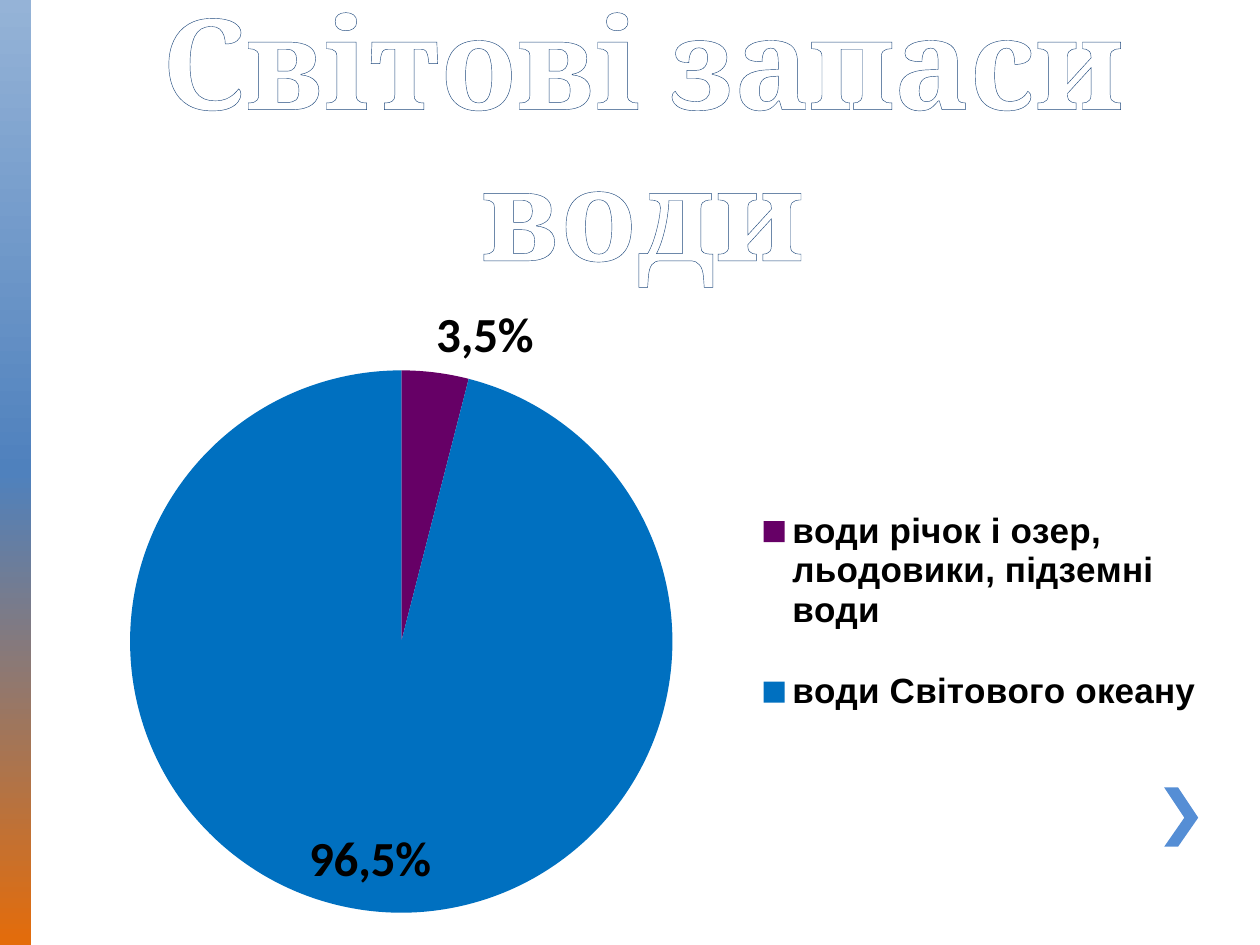
from copy import deepcopy

from lxml import etree
from pptx import Presentation
from pptx.chart.data import CategoryChartData
from pptx.dml.color import RGBColor
from pptx.enum.chart import XL_CHART_TYPE, XL_LABEL_POSITION, XL_LEGEND_POSITION
from pptx.enum.shapes import MSO_SHAPE
from pptx.enum.text import MSO_ANCHOR, MSO_AUTO_SIZE, PP_ALIGN
from pptx.oxml import parse_xml
from pptx.oxml.ns import nsdecls, qn
from pptx.util import Inches, Pt

PIE = XL_CHART_TYPE.PIE
LEGEND_RIGHT = XL_LEGEND_POSITION.RIGHT
OUTSIDE_END = XL_LABEL_POSITION.OUTSIDE_END
INSIDE_END = XL_LABEL_POSITION.INSIDE_END
RECTANGLE = MSO_SHAPE.RECTANGLE
MIDDLE = MSO_ANCHOR.MIDDLE
NO_AUTOFIT = MSO_AUTO_SIZE.NONE
CENTER = PP_ALIGN.CENTER

BAR_STOPS = [(0, "95B3D7"), (0.5, "4F81BD"), (1, "E46C0A")]
ARROW_POINTS = [(9.35, 6.25), (9.24, 6.25), (9.4, 6.49), (9.24, 6.72), (9.35, 6.72), (9.51, 6.49)]
WATER_SHARES = [
    ("води річок і озер, льодовики, підземні води", 4, "3,5%", "660066", OUTSIDE_END),
    ("води Світового океану", 96, "96,5%", "0070C0", INSIDE_END),
]
OCEAN_LABEL_SHIFT = {"x": -0.05, "y": -0.02}
PLOT_FRAME = {"layoutTarget": "inner", "xMode": "edge", "yMode": "edge",
              "x": 0.08, "y": 0.16, "w": 0.46, "h": 0.82}
LEGEND_FRAME = {"xMode": "edge", "yMode": "edge", "x": 0.61, "y": 0.31, "w": 0.38, "h": 0.43}
TITLE_FONT = {"name": "Cambria", "size": Pt(72), "bold": True}
CHART_FONT = {"name": "Calibri", "size": Pt(18)}
LABEL_FONT = {"name": "Calibri", "size": Pt(28), "bold": True}
LEGEND_FONT = {"name": "Arial", "size": Pt(20), "bold": True}


def color(value):
    """Return the colour for a hex string."""
    return RGBColor.from_string(value)


def set_values(target, values):
    """Set every attribute in a dict on the target."""
    for name, value in values.items():
        setattr(target, name, value)


def format_font(font, values, hex_color="000000"):
    """Apply font values and a colour."""
    set_values(font, values)
    font.color.rgb = color(hex_color)


def place(left, top, width, height):
    """Return a frame in inches as a dict."""
    return {"left": Inches(left), "top": Inches(top),
            "width": Inches(width), "height": Inches(height)}


def add_side_bar(slide):
    """Add the vertical gradient bar at the left edge."""
    bar = slide.shapes.add_shape(RECTANGLE, **place(0, 0, 0.25, 7.5))
    bar.shadow.inherit = False
    bar.line.fill.background()
    bar.fill.gradient()
    bar.fill.gradient_angle = 270
    stop_list = next(bar.element.iter(qn("a:gsLst")))
    stop_list.append(deepcopy(stop_list[-1]))
    for stop, (position, hex_color) in zip(bar.fill.gradient_stops, BAR_STOPS):
        stop.position = position
        stop.color.rgb = color(hex_color)


def add_arrow(slide):
    """Add the angle-shaped arrow at the lower right."""
    start, *others = [(Inches(x), Inches(y)) for x, y in ARROW_POINTS]
    builder = slide.shapes.build_freeform(*start)
    builder.add_line_segments(others, close=True)
    arrow = builder.convert_to_shape()
    arrow.shadow.inherit = False
    arrow.line.fill.background()
    arrow.fill.solid()
    arrow.fill.fore_color.rgb = color("558ED5")


def format_title(title, text):
    """Place the title and give it white outlined letters."""
    set_values(title, place(0.2, 0.02, 9.8, 2.1))
    frame = title.text_frame
    set_values(frame, {"text": text, "word_wrap": True,
                       "auto_size": NO_AUTOFIT, "vertical_anchor": MIDDLE})
    paragraph = frame.paragraphs[0]
    paragraph.alignment = CENTER
    run = paragraph.runs[0]
    format_font(run.font, TITLE_FONT, "FFFFFF")
    outline = parse_xml(
        f'<a:ln {nsdecls("a")} w="12700"><a:solidFill><a:srgbClr val="1F497D"/></a:solidFill></a:ln>')
    run.font._element.insert(0, outline)


def set_layout(element, index, values):
    """Give a chart part a manual layout in fractions of the chart."""
    for old in element.findall(qn("c:layout")):
        element.remove(old)
    layout = etree.Element(qn("c:layout"))
    manual = etree.SubElement(layout, qn("c:manualLayout"))
    for name, value in values.items():
        etree.SubElement(manual, qn(f"c:{name}"), val=str(value))
    element.insert(index, layout)


def add_water_chart(slide):
    """Add the pie chart of the world's water."""
    data = CategoryChartData()
    data.categories = [share[0] for share in WATER_SHARES]
    data.add_series("Series 1", [share[1] for share in WATER_SHARES])
    frame = place(0.28, 2.1, 9.37, 5.25)
    chart = slide.shapes.add_chart(PIE, *frame.values(), data).chart
    set_values(chart, {"has_title": False, "has_legend": True})
    format_font(chart.font, CHART_FONT)
    set_values(chart.legend, {"position": LEGEND_RIGHT, "include_in_layout": False})
    format_font(chart.legend.font, LEGEND_FONT)

    plot = chart.plots[0]
    set_values(plot, {"vary_by_categories": True, "has_data_labels": True})
    set_values(plot.data_labels, {"show_percentage": True, "show_value": False})
    format_font(plot.data_labels.font, LABEL_FONT)
    for index, (_, _, text, hex_color, position) in enumerate(WATER_SHARES):
        point = plot.series[0].points[index]
        point.format.fill.solid()
        point.format.fill.fore_color.rgb = color(hex_color)
        point.format.line.fill.background()
        label = point.data_label
        label.text_frame.text = text
        format_font(label.text_frame.paragraphs[0].runs[0].font, LABEL_FONT)
        label.position = position

    ocean_label = list(chart.element.iter(qn("c:dLbl")))[-1]
    set_layout(ocean_label, 1, OCEAN_LABEL_SHIFT)
    plot_area = next(chart.element.iter(qn("c:plotArea")))
    set_layout(plot_area, 0, PLOT_FRAME)
    set_layout(chart.legend._element, 1, LEGEND_FRAME)


def main():
    """Build the slide and save it."""
    presentation = Presentation()
    set_values(presentation, {"slide_width": Inches(10), "slide_height": Inches(7.5)})
    slide = presentation.slides.add_slide(presentation.slide_layouts[5])
    add_side_bar(slide)
    add_arrow(slide)
    format_title(slide.shapes.title, "Світові запаси води")
    add_water_chart(slide)
    presentation.save("out.pptx")


if __name__ == "__main__":
    main()
